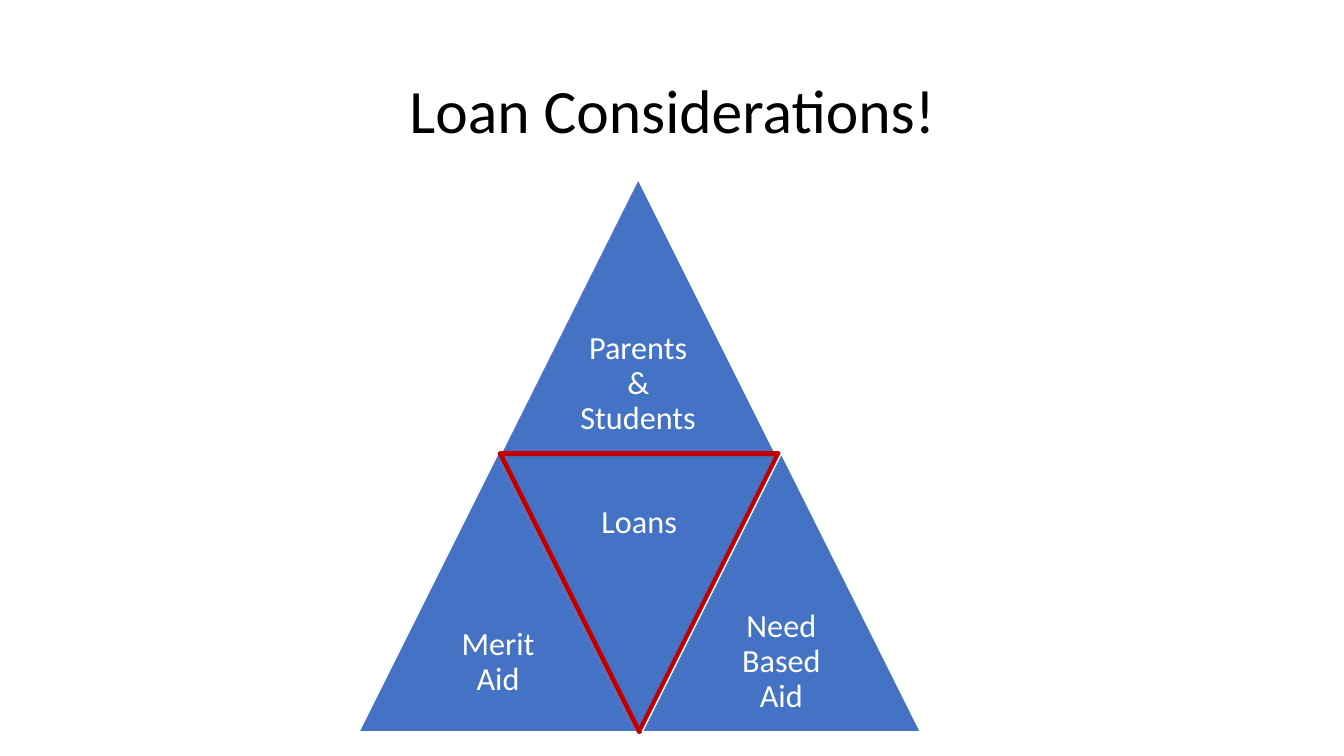
from pptx import Presentation
from pptx.dml.color import RGBColor
from pptx.enum.shapes import MSO_SHAPE
from pptx.enum.text import MSO_ANCHOR, PP_ALIGN
from pptx.util import Inches, Pt

TRIANGLE = MSO_SHAPE.ISOSCELES_TRIANGLE
MIDDLE = MSO_ANCHOR.MIDDLE
CENTER = PP_ALIGN.CENTER
TITLE_ONLY = 5

COLORS = {"title": "000000", "fill": "4472C4", "label": "FFFFFF",
          "edge": "FFFFFF", "highlight": "C00000"}
SIDE = 2.76  # width and height of each triangle
ROW_TOP = 4.5


class SlideBuilder:
    """Holds the text style and the current slide."""

    font = "Calibri"
    title_size = 44
    label_size = 23
    line_spacing = 0.9
    label_inset = 0.1

    def __init__(self, slide):
        self.slide = slide

    def color(self, name):
        return RGBColor.from_string(COLORS[name])

    def set_text(self, text_frame, text, size, color):
        text_frame.word_wrap = True
        text_frame.vertical_anchor = MIDDLE
        paragraph = text_frame.paragraphs[0]
        paragraph.alignment = CENTER
        paragraph.line_spacing = self.line_spacing
        run = paragraph.add_run()
        run.text = text
        run.font.name = self.font
        run.font.size = Pt(size)
        run.font.color.rgb = self.color(color)

    def title(self, text, left, top, width, height):
        shape = self.slide.shapes.title
        shape.left, shape.top = Inches(left), Inches(top)
        shape.width, shape.height = Inches(width), Inches(height)
        self.set_text(shape.text_frame, text, self.title_size, "title")

    def triangle(self, left, top, edge, edge_width, rotation):
        shape = self.slide.shapes.add_shape(
            TRIANGLE, Inches(left), Inches(top), Inches(SIDE), Inches(SIDE))
        shape.shadow.inherit = False
        shape.rotation = rotation
        shape.fill.solid()
        shape.fill.fore_color.rgb = self.color("fill")
        shape.line.color.rgb = self.color(edge)
        shape.line.width = Pt(edge_width)

    def label(self, text, left, top):
        box = self.slide.shapes.add_textbox(
            Inches(left), Inches(top), Inches(SIDE / 2), Inches(SIDE / 2))
        frame = box.text_frame
        frame.margin_left = frame.margin_right = Inches(self.label_inset)
        frame.margin_top = frame.margin_bottom = Inches(self.label_inset)
        self.set_text(frame, text, self.label_size, "label")

    def segment(self, text, left, top, edge, edge_width, rotation=0):
        """A triangle with its label in the wide half."""
        self.triangle(left, top, edge, edge_width, rotation)
        label_top = top if rotation else top + SIDE / 2
        self.label(text, left + SIDE / 4, label_top)


def main():
    presentation = Presentation()
    presentation.slide_width = Inches(13.33)
    presentation.slide_height = Inches(7.5)
    layout = presentation.slide_layouts[TITLE_ONLY]
    builder = SlideBuilder(presentation.slides.add_slide(layout))

    # Title
    builder.title("Loan Considerations!", 0.92, 0.4, 11.5, 1.45)

    # Top of the pyramid
    builder.segment("Parents & Students", 4.95, ROW_TOP - SIDE, "edge", 3.5)

    # Bottom row, with the inverted triangle highlighted
    builder.segment("Merit Aid", 3.56, ROW_TOP, "edge", 1)
    builder.segment("Loans", 4.96, ROW_TOP, "highlight", 3.5, rotation=180)
    builder.segment("Need Based Aid", 6.37, ROW_TOP, "edge", 1)

    presentation.save("out.pptx")


if __name__ == "__main__":
    main()
